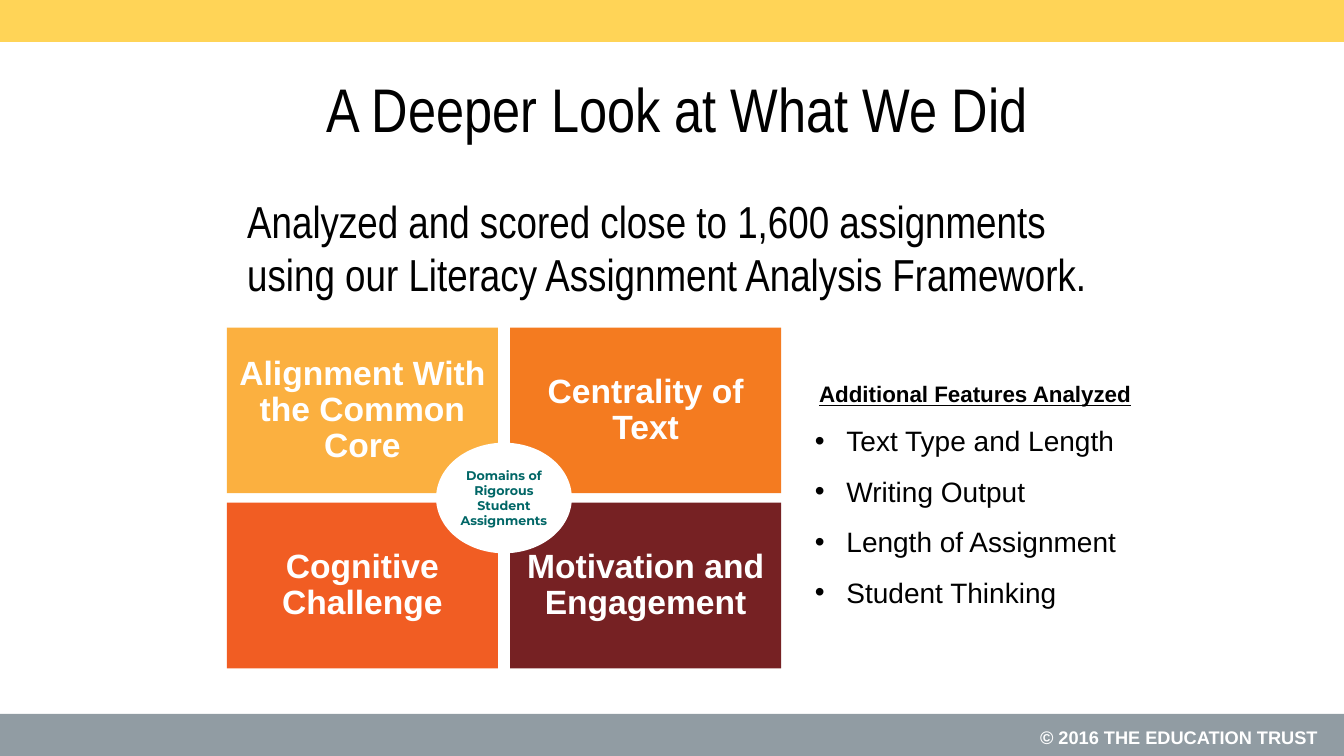
from dataclasses import dataclass

from lxml import etree
from pptx import Presentation
from pptx.dml.color import RGBColor
from pptx.enum.shapes import MSO_SHAPE as SHAPE
from pptx.enum.text import MSO_ANCHOR as ANCHOR, PP_ALIGN as ALIGN
from pptx.oxml.ns import qn
from pptx.util import Pt


@dataclass(frozen=True)
class Theme:
    # Colours
    black: str = "000000"
    white: str = "FFFFFF"
    yellow: str = "FFD457"
    grey: str = "919CA3"
    teal: str = "006666"
    amber: str = "FBB040"
    orange: str = "F47B20"
    red: str = "F15D23"
    maroon: str = "762123"
    # Fonts
    sans: str = "Arial"
    narrow: str = "Arial Narrow"
    hub_font: str = "Montserrat"
    # Type sizes
    title: int = 44
    lead: int = 32
    domain: int = 24
    feature: int = 20
    heading: int = 16
    footer: int = 13
    hub: int = 9


T = Theme()
SLIDE_W, SLIDE_H, BAND_H = 960, 540, 30

DOMAINS = [
    ("Alignment With the Common Core", T.amber),
    ("Centrality of Text", T.orange),
    ("Cognitive Challenge", T.red),
    ("Motivation and Engagement", T.maroon),
]
FEATURES = ["Text Type and Length", "Writing Output",
            "Length of Assignment", "Student Thinking"]


def add_bullet(p, indent):
    pPr = p._p.get_or_add_pPr()
    pPr.set("marL", str(Pt(indent)))
    pPr.set("indent", str(-Pt(indent)))
    etree.SubElement(pPr, qn("a:buFont")).set("typeface", T.sans)
    etree.SubElement(pPr, qn("a:buChar")).set("char", "•")


def write(p, text, *, size, font=T.sans, color=T.black, bold=False,
          underline=False, align=ALIGN.LEFT, spacing=None, bullet=None):
    """Write one formatted paragraph."""
    p.alignment = align
    if spacing:
        p.line_spacing = spacing
    if bullet:
        add_bullet(p, bullet)
    r = p.add_run()
    r.text = text
    r.font.name, r.font.size = font, Pt(size)
    r.font.bold, r.font.underline = bold, underline
    r.font.color.rgb = RGBColor.from_string(color)


def add_block(s, kind, box, fill, inset=0):
    """Add a plain filled shape and return its text frame."""
    sp = s.shapes.add_shape(kind, *map(Pt, box))
    sp.shadow.inherit = False
    sp.fill.solid()
    sp.fill.fore_color.rgb = RGBColor.from_string(fill)
    sp.line.fill.background()
    tf = sp.text_frame
    tf.word_wrap = True
    tf.vertical_anchor = ANCHOR.MIDDLE
    tf.margin_left = tf.margin_right = Pt(inset)
    tf.margin_top = tf.margin_bottom = Pt(inset)
    return tf


def add_text(s, box):
    tf = s.shapes.add_textbox(*map(Pt, box)).text_frame
    tf.word_wrap = True
    return tf


def add_bands(s):
    add_block(s, SHAPE.RECTANGLE, (0, 0, SLIDE_W, BAND_H), T.yellow)
    add_block(s, SHAPE.RECTANGLE, (0, SLIDE_H - BAND_H, SLIDE_W, BAND_H), T.grey)
    tf = add_text(s, (652, 515, 296, 23))
    write(tf.paragraphs[0], "© 2016 THE EDUCATION TRUST", size=T.footer,
          color=T.white, bold=True, align=ALIGN.RIGHT, spacing=Pt(16))


def add_title(s, text):
    sp = s.shapes.title
    sp.left, sp.top, sp.width, sp.height = map(Pt, (64, 42, 840, 70))
    sp.text_frame.vertical_anchor = ANCHOR.MIDDLE
    write(sp.text_frame.paragraphs[0], text, size=T.title, font=T.narrow,
          align=ALIGN.CENTER)


def add_domains(s):
    left, top, w, h = 162, 234, 193.7, 118.3
    gap_x, gap_y = 8.6, 6.8
    for i, (name, color) in enumerate(DOMAINS):
        row, col = divmod(i, 2)
        box = (left + col * (w + gap_x), top + row * (h + gap_y), w, h)
        tf = add_block(s, SHAPE.RECTANGLE, box, color, inset=7.2)
        write(tf.paragraphs[0], name, size=T.domain, color=T.white, bold=True,
              align=ALIGN.CENTER, spacing=0.9)

    # Hub centred where the four tiles meet
    hub_w, hub_h = 97, 79
    box = (left + w + (gap_x - hub_w) / 2, top + h + (gap_y - hub_h) / 2,
           hub_w, hub_h)
    tf = add_block(s, SHAPE.OVAL, box, T.white)
    write(tf.paragraphs[0], "Domains of Rigorous Student Assignments",
          size=T.hub, font=T.hub_font, color=T.teal, bold=True,
          align=ALIGN.CENTER)


def add_features(s):
    tf = add_text(s, (575, 258.5, 243, 254))
    write(tf.paragraphs[0], "Additional Features Analyzed", size=T.heading,
          bold=True, underline=True, align=ALIGN.CENTER, spacing=1.5)
    for name in FEATURES:
        write(tf.add_paragraph(), name, size=T.feature, spacing=1.5, bullet=22.5)


def main():
    prs = Presentation()
    prs.slide_width, prs.slide_height = Pt(SLIDE_W), Pt(SLIDE_H)
    s = prs.slides.add_slide(prs.slide_layouts[5])

    add_bands(s)
    add_title(s, "A Deeper Look at What We Did")

    # Lead sentence
    tf = add_text(s, (169.5, 134.6, 621, 90))
    write(tf.paragraphs[0],
          "Analyzed and scored close to 1,600 assignments using our "
          "Literacy Assignment Analysis Framework.",
          size=T.lead, font=T.narrow)

    add_domains(s)
    add_features(s)
    prs.save("out.pptx")


if __name__ == "__main__":
    main()
